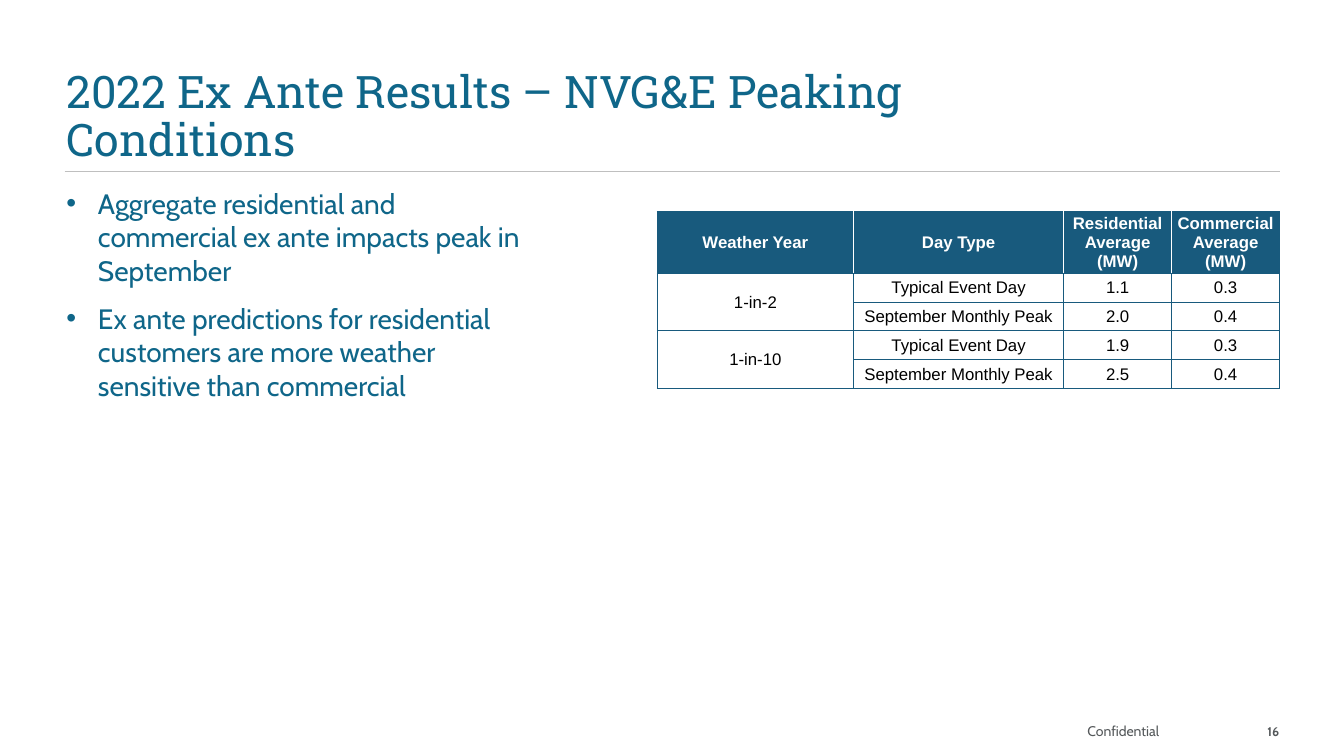
from dataclasses import dataclass

from lxml.etree import SubElement
from pptx import Presentation
from pptx.dml.color import RGBColor
from pptx.enum.shapes import MSO_CONNECTOR
from pptx.enum.text import MSO_ANCHOR, PP_ALIGN
from pptx.oxml.ns import qn
from pptx.util import Pt


@dataclass(frozen=True)
class Theme:
    heading: str = "0F6689"
    table: str = "185A7D"
    rule: str = "BFBFBF"
    footer: str = "54585A"
    white: str = "FFFFFF"
    black: str = "000000"
    title_font: str = "Roboto Slab"
    body_font: str = "Cabin"
    table_font: str = "Arial"
    title_size: int = 32
    body_size: int = 20
    table_size: int = 12
    footer_size: int = 10
    number_size: int = 9


THEME = Theme()
BULLETS = [
    "Aggregate residential and commercial ex ante impacts peak in September",
    "Ex ante predictions for residential customers are more weather sensitive than commercial",
]
HEADERS = ["Weather Year", "Day Type", "Residential Average (MW)", "Commercial Average (MW)"]
IMPACTS = {
    "1-in-2": [("Typical Event Day", "1.1", "0.3"), ("September Monthly Peak", "2.0", "0.4")],
    "1-in-10": [("Typical Event Day", "1.9", "0.3"), ("September Monthly Peak", "2.5", "0.4")],
}
COLUMN_WIDTHS = [140.4, 150, 77.15, 77.15]
HEADER_HEIGHT, ROW_HEIGHT = 36, 20.6


def apply(target, formats):
    for name, value in formats.items():
        setattr(target, name, value)


def style_font(paragraph, name, size, color, bold=False):
    apply(paragraph.font, {"name": name, "size": Pt(size), "bold": bold})
    paragraph.font.color.rgb = RGBColor.from_string(color)


def add_text_frame(slide, box, anchor, margin_left=0, margin_right=0):
    frame = slide.shapes.add_textbox(*map(Pt, box)).text_frame
    apply(frame, {
        "word_wrap": True, "vertical_anchor": anchor,
        "margin_left": Pt(margin_left), "margin_right": Pt(margin_right),
        "margin_top": Pt(3.6), "margin_bottom": Pt(3.6),
    })
    return frame


def add_title(slide, box, text):
    """Place the title, with the full-width rule on its lower edge."""
    left, top, width, height = box
    rule = slide.shapes.add_connector(
        MSO_CONNECTOR.STRAIGHT, Pt(left - 1.4), Pt(top + height), Pt(left + width + 2), Pt(top + height))
    rule.line.color.rgb = RGBColor.from_string(THEME.rule)
    rule.line.width = Pt(1)
    SubElement(rule._element.spPr, qn("a:effectLst"))

    paragraph = add_text_frame(slide, box, MSO_ANCHOR.BOTTOM, margin_right=108).paragraphs[0]
    apply(paragraph, {"text": text, "line_spacing": 0.9})
    style_font(paragraph, THEME.title_font, THEME.title_size, THEME.heading)


def add_bullets(slide, box, texts):
    frame = add_text_frame(slide, box, MSO_ANCHOR.TOP, margin_right=7.2)
    for index, text in enumerate(texts):
        paragraph = frame.add_paragraph() if index else frame.paragraphs[0]
        paragraph.text = text
        properties = paragraph._p.get_or_add_pPr()
        properties.set("marL", str(Pt(22.5)))
        properties.set("indent", str(Pt(-22.5)))
        SubElement(properties, qn("a:buFont"), typeface="Arial")
        SubElement(properties, qn("a:buChar"), char="•")
        if index:
            paragraph.space_before = Pt(10)
        style_font(paragraph, THEME.body_font, THEME.body_size, THEME.heading)


def set_borders(cell, colors):
    """Draw the left, right, top and bottom borders in the given colors."""
    properties = cell._tc.get_or_add_tcPr()
    for side, color in zip("LRTB", colors):
        line = SubElement(properties, qn(f"a:ln{side}"), w=str(Pt(0.5)))
        fill = SubElement(line, qn("a:solidFill"))
        SubElement(fill, qn("a:srgbClr"), val=color)


def format_cell(cell, text, is_header, left_color, right_color):
    apply(cell, {
        "text": text, "vertical_anchor": MSO_ANCHOR.MIDDLE, "margin_left": Pt(0.7),
        "margin_right": Pt(0.7), "margin_top": Pt(0.7), "margin_bottom": 0,
    })
    set_borders(cell, [left_color, right_color, THEME.table, THEME.table])
    if is_header:
        cell.fill.solid()
        cell.fill.fore_color.rgb = RGBColor.from_string(THEME.table)
    else:
        cell.fill.background()
    paragraph = cell.text_frame.paragraphs[0]
    paragraph.alignment = PP_ALIGN.CENTER
    style_font(paragraph, THEME.table_font, THEME.table_size,
               THEME.white if is_header else THEME.black, is_header)


def add_impact_table(slide, left, top):
    rows = [HEADERS]
    groups = []
    for weather_year, day_types in IMPACTS.items():
        groups.append((len(rows), len(rows) + len(day_types) - 1))
        for index, values in enumerate(day_types):
            rows.append(["" if index else weather_year, *values])

    heights = [HEADER_HEIGHT] + [ROW_HEIGHT] * (len(rows) - 1)
    table = slide.shapes.add_table(
        len(rows), len(HEADERS), Pt(left), Pt(top), Pt(sum(COLUMN_WIDTHS)), Pt(sum(heights))).table
    apply(table, {"first_row": False, "horz_banding": False})
    for column, width in zip(table.columns, COLUMN_WIDTHS):
        column.width = Pt(width)
    for row, height in zip(table.rows, heights):
        row.height = Pt(height)

    last = len(HEADERS) - 1
    for row_index, texts in enumerate(rows):
        is_header = row_index == 0
        inner = THEME.white if is_header else THEME.table
        for column_index, text in enumerate(texts):
            format_cell(table.cell(row_index, column_index), text, is_header,
                        inner if column_index else THEME.table,
                        inner if column_index < last else THEME.table)
    for first_row, last_row in groups:
        table.cell(first_row, 0).merge(table.cell(last_row, 0))


def add_footer(slide, box, label, number):
    """Place the label at the left of the box and the slide number at its right."""
    left, top, width, height = box
    number_width = 41
    parts = [
        (label, left, 93, PP_ALIGN.LEFT, THEME.footer_size, False),
        (number, left + width - number_width, number_width, PP_ALIGN.RIGHT, THEME.number_size, True),
    ]
    for text, part_left, part_width, alignment, size, bold in parts:
        frame = add_text_frame(slide, (part_left, top, part_width, height), MSO_ANCHOR.BOTTOM, margin_left=7.2)
        paragraph = frame.paragraphs[0]
        apply(paragraph, {"text": text, "alignment": alignment})
        style_font(paragraph, THEME.body_font, size, THEME.footer, bold)


def main():
    presentation = Presentation()
    apply(presentation, {"slide_width": Pt(960), "slide_height": Pt(540)})
    slide = presentation.slides.add_slide(presentation.slide_layouts[6])
    add_title(slide, (47.5, 50.4, 864.7, 72), "2022 Ex Ante Results – NVG&E Peaking Conditions")
    add_bullets(slide, (47.5, 129.6, 343.4, 349.9), BULLETS)
    add_impact_table(slide, 469.4, 151.2)
    add_footer(slide, (769.7, 502.6, 144, 28.8), "Confidential", "16")
    presentation.save("out.pptx")


if __name__ == "__main__":
    main()
